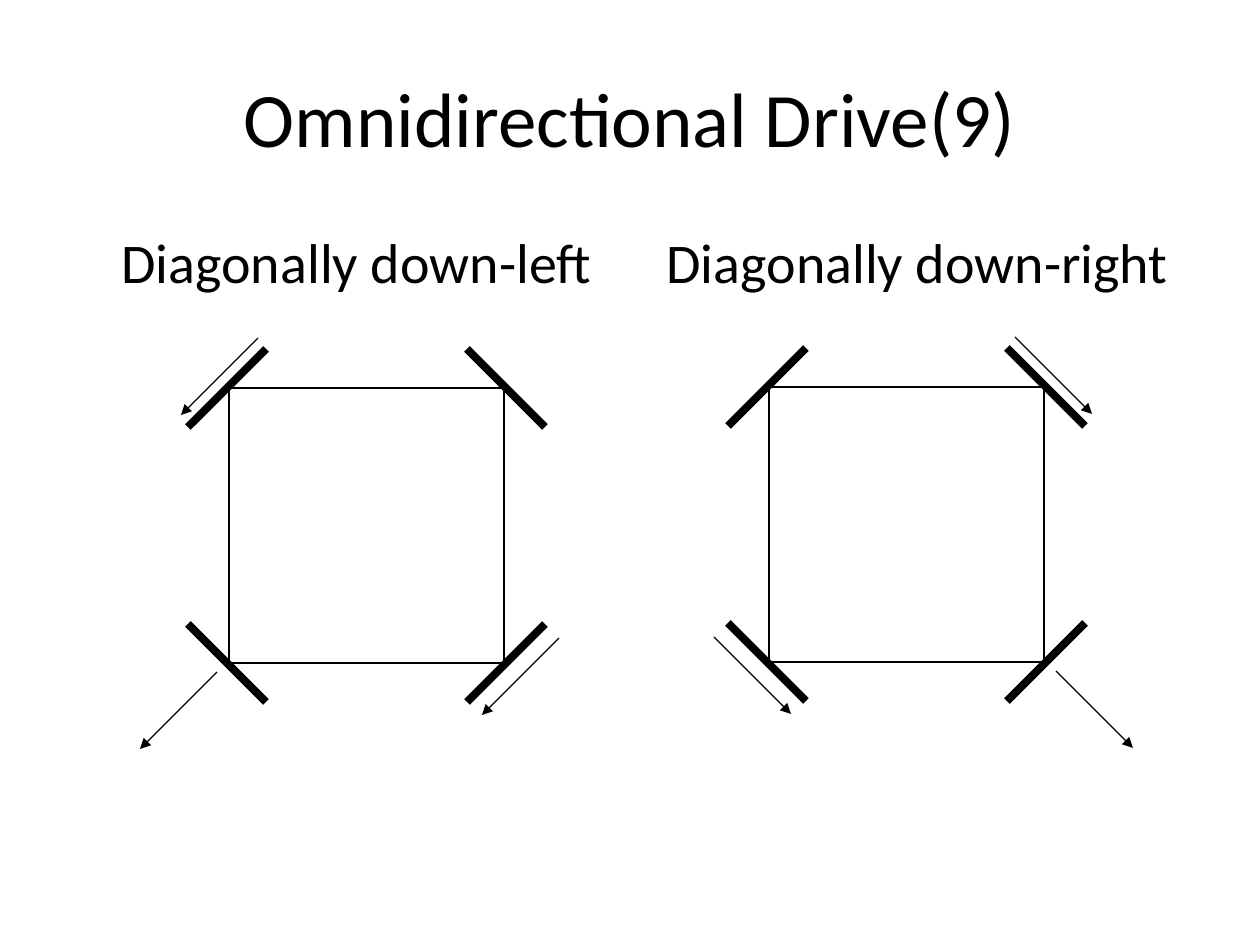
from dataclasses import dataclass
from itertools import product

from lxml import etree
from pptx import Presentation
from pptx.dml.color import RGBColor
from pptx.enum.shapes import MSO_CONNECTOR, MSO_SHAPE
from pptx.enum.text import MSO_ANCHOR, PP_ALIGN
from pptx.oxml.ns import qn
from pptx.util import Emu, Pt

STRAIGHT = MSO_CONNECTOR.STRAIGHT
RECTANGLE = MSO_SHAPE.RECTANGLE
TOP, MIDDLE = MSO_ANCHOR.TOP, MSO_ANCHOR.MIDDLE
LEFT, CENTER = PP_ALIGN.LEFT, PP_ALIGN.CENTER

EMU_PER_INCH = 914400
PX_PER_INCH = 126
FONT = "Calibri"
BLACK, WHITE = "000000", "FFFFFF"
THIN, THICK = 0.75, 4.5

SIDE = 275          # side of the robot body
WHEEL_REACH = 39    # half the extent of a wheel, along each axis
WHEEL_OFFSET = 2    # wheel centres lie this far outside the body
ARROW_REACH = 77    # extent of an arrow, along each axis
# Arrow starts from the body's top-left corner, for a drive to the left
ARROW_STARTS = ((330, 250), (29, -50), (-12, 284))


@dataclass(frozen=True)
class Label:
    text: str
    left: int
    top: int
    width: int
    height: int
    size: int
    align: PP_ALIGN = LEFT
    anchor: MSO_ANCHOR = TOP


@dataclass(frozen=True)
class Drive:
    left: int
    top: int
    mirrored: bool


LABELS = (
    Label("Omnidirectional Drive(9)", 63, 38, 1134, 157, 44, CENTER, MIDDLE),
    Label("Diagonally down-left", 109, 221, 520, 85, 32),
    Label("Diagonally down-right", 654, 221, 560, 85, 32),
)
DRIVES = (Drive(769, 387, True), Drive(229, 388, False))


def px(length: int) -> Emu:
    return Emu(round(length * EMU_PER_INCH / PX_PER_INCH))


def color(value: str) -> RGBColor:
    return RGBColor.from_string(value)


def add_label(slide, label: Label) -> None:
    box = slide.shapes.add_textbox(
        px(label.left), px(label.top), px(label.width), px(label.height))
    frame = box.text_frame
    frame.word_wrap = True
    frame.vertical_anchor = label.anchor
    para = frame.paragraphs[0]
    para.alignment = label.align
    span = para.add_run()
    span.text = label.text
    span.font.name = FONT
    span.font.size = Pt(label.size)
    span.font.color.rgb = color(BLACK)


def add_line(group, start: tuple[int, int], end: tuple[int, int],
             weight: float, arrow: bool = False) -> None:
    line = group.shapes.add_connector(
        STRAIGHT, px(start[0]), px(start[1]), px(end[0]), px(end[1]))
    line.line.width = Pt(weight)
    line.line.color.rgb = color(BLACK)
    if arrow:
        outline = line.line._get_or_add_ln()
        etree.SubElement(outline, qn("a:tailEnd"), type="triangle")
    properties = line._element.spPr
    etree.SubElement(properties, qn("a:effectLst"))


def add_body(group, drive: Drive) -> None:
    body = group.shapes.add_shape(
        RECTANGLE, px(drive.left), px(drive.top), px(SIDE), px(SIDE))
    body.shadow.inherit = False
    body.fill.solid()
    body.fill.fore_color.rgb = color(WHITE)
    body.line.color.rgb = color(BLACK)
    body.line.width = Pt(THIN)


def add_wheels(group, drive: Drive) -> None:
    """Put a wheel across each corner, at right angles to the diagonal."""
    for side_x, side_y in product((-1, 1), repeat=2):
        x = drive.left + (SIDE if side_x > 0 else 0) + side_x * WHEEL_OFFSET
        y = drive.top + (SIDE if side_y > 0 else 0)
        reach_x, reach_y = side_x * WHEEL_REACH, side_y * WHEEL_REACH
        add_line(group, (x - reach_x, y + reach_y),
                 (x + reach_x, y - reach_y), THICK)


def add_arrows(group, drive: Drive) -> None:
    for offset_x, offset_y in ARROW_STARTS:
        x = drive.left + (SIDE - offset_x if drive.mirrored else offset_x)
        y = drive.top + offset_y
        run = ARROW_REACH if drive.mirrored else -ARROW_REACH
        add_line(group, (x, y), (x + run, y + ARROW_REACH), THIN, arrow=True)


def add_drive(slide, drive: Drive) -> None:
    group = slide.shapes.add_group_shape()
    add_body(group, drive)
    add_wheels(group, drive)
    add_arrows(group, drive)


def main() -> None:
    deck = Presentation()
    deck.slide_width, deck.slide_height = px(1260), px(945)
    page = deck.slides.add_slide(deck.slide_layouts[6])
    for label in LABELS:
        add_label(page, label)
    for drive in DRIVES:
        add_drive(page, drive)
    deck.save("out.pptx")


if __name__ == "__main__":
    main()
